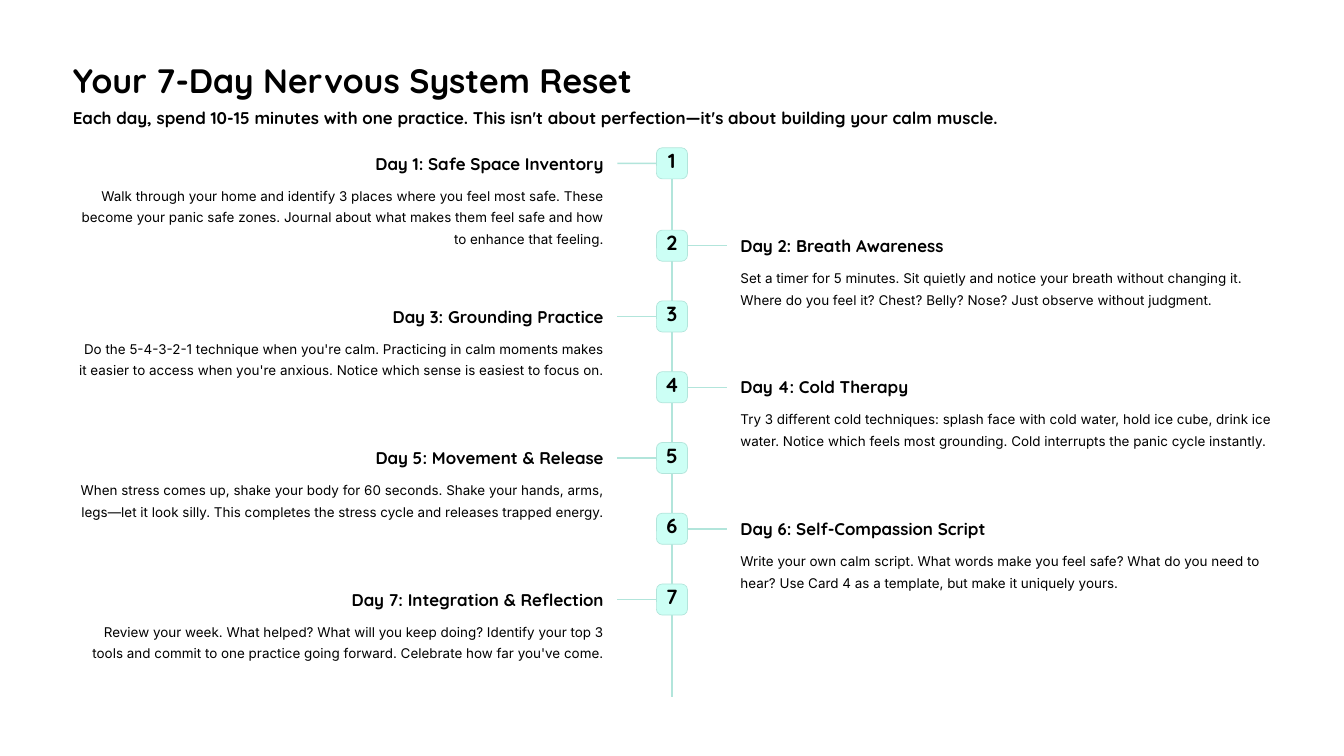
from lxml.etree import SubElement
from pptx import Presentation
from pptx.dml.color import RGBColor
from pptx.enum.shapes import MSO_CONNECTOR as Connector, MSO_SHAPE as Shape
from pptx.enum.text import MSO_ANCHOR as Anchor, MSO_AUTO_SIZE as AutoSize, PP_ALIGN as Align
from pptx.oxml.ns import qn
from pptx.util import Cm, Pt

SLIDE_WIDTH, SLIDE_HEIGHT = 40.64, 22.86
CENTRE = SLIDE_WIDTH / 2
MARGIN = 2.2
COLUMN_WIDTH = 16.05
BADGE = 0.94
BRANCH_REACH = 1.65
FIRST_DAY_TOP, SECOND_DAY_TOP, DAY_STEP = 4.47, 6.96, 2.14
SPINE_BOTTOM = 21.08

INK, MINT, MINT_EDGE = "000000", "CCFFF5", "B2E5DB"
HEADING_FONT, BODY_FONT = "Quicksand", "Inter"

DAYS = [
    ("Day 1: Safe Space Inventory",
     "Walk through your home and identify 3 places where you feel most safe. These become your "
     "panic safe zones. Journal about what makes them feel safe and how to enhance that feeling."),
    ("Day 2: Breath Awareness",
     "Set a timer for 5 minutes. Sit quietly and notice your breath without changing it. "
     "Where do you feel it? Chest? Belly? Nose? Just observe without judgment."),
    ("Day 3: Grounding Practice",
     "Do the 5-4-3-2-1 technique when you're calm. Practicing in calm moments makes it easier "
     "to access when you're anxious. Notice which sense is easiest to focus on."),
    ("Day 4: Cold Therapy",
     "Try 3 different cold techniques: splash face with cold water, hold ice cube, drink ice "
     "water. Notice which feels most grounding. Cold interrupts the panic cycle instantly."),
    ("Day 5: Movement & Release",
     "When stress comes up, shake your body for 60 seconds. Shake your hands, arms, legs—let it "
     "look silly. This completes the stress cycle and releases trapped energy."),
    ("Day 6: Self-Compassion Script",
     "Write your own calm script. What words make you feel safe? What do you need to hear? "
     "Use Card 4 as a template, but make it uniquely yours."),
    ("Day 7: Integration & Reflection",
     "Review your week. What helped? What will you keep doing? Identify your top 3 tools and "
     "commit to one practice going forward. Celebrate how far you've come."),
]


def colour(value):
    """Turn a hex string into a colour."""
    return RGBColor.from_string(value)


def write(holder, words, size, leading, font=HEADING_FONT, align=Align.LEFT, top_inset=0):
    """Fill a shape with one formatted paragraph; headings are bold."""
    frame = holder.text_frame
    frame.text = words
    frame.word_wrap = True
    frame.auto_size = AutoSize.NONE
    frame.vertical_anchor = Anchor.TOP
    frame.margin_left = frame.margin_right = frame.margin_bottom = 0
    frame.margin_top = Cm(top_inset)
    paragraph = frame.paragraphs[0]
    paragraph.alignment = align
    paragraph.line_spacing = Pt(leading)
    paragraph.space_before = Pt(0)
    for run in paragraph.runs:
        run.font.name = font
        run.font.size = Pt(size)
        run.font.bold = font == HEADING_FONT
        run.font.color.rgb = colour(INK)


def place(holder, left, top, width, height):
    """Move and size a placeholder."""
    holder.left, holder.top = Cm(left), Cm(top)
    holder.width, holder.height = Cm(width), Cm(height)


def add_line(slide, x1, y1, x2, y2):
    """Draw a thin mint line without shadow."""
    line = slide.shapes.add_connector(Connector.STRAIGHT, Cm(x1), Cm(y1), Cm(x2), Cm(y2))
    line.line.color.rgb = colour(MINT_EDGE)
    line.line.width = Pt(1.25)
    SubElement(line._element.spPr, qn("a:effectLst"))
    return line


def add_badge(slide, number, top):
    """Draw the rounded number badge centred on the spine."""
    badge = slide.shapes.add_shape(
        Shape.ROUNDED_RECTANGLE, Cm(CENTRE - BADGE / 2), Cm(top), Cm(BADGE), Cm(BADGE))
    badge.adjustments[0] = 0.19
    badge.shadow.inherit = False
    badge.fill.solid()
    badge.fill.fore_color.rgb = colour(MINT)
    badge.line.color.rgb = colour(MINT_EDGE)
    badge.line.width = Pt(0.6)
    write(badge, str(number), 17.5, 17.5, align=Align.CENTER, top_inset=0.08)
    return badge


def add_day(slide, number, heading, practice):
    """Add one day, on the left if odd and on the right if even."""
    on_left = number % 2 == 1
    top = FIRST_DAY_TOP if number == 1 else SECOND_DAY_TOP + (number - 2) * DAY_STEP
    left = MARGIN if on_left else SLIDE_WIDTH - MARGIN - COLUMN_WIDTH
    align = Align.RIGHT if on_left else Align.LEFT
    side = -1 if on_left else 1
    middle = top + BADGE / 2

    badge = add_badge(slide, number, top)
    branch = add_line(slide, CENTRE + side * BRANCH_REACH, middle,
                      CENTRE + side * BADGE / 2, middle)
    branch.end_connect(badge, 1 if on_left else 3)

    title = slide.shapes.add_textbox(Cm(left), Cm(top + 0.14), Cm(COLUMN_WIDTH), Cm(0.64))
    write(title, heading, 14.5, 18, align=align)
    details = slide.shapes.add_textbox(Cm(left), Cm(top + 1.04), Cm(COLUMN_WIDTH), Cm(1.98))
    write(details, practice, 11.5, 18.5, BODY_FONT, align)
    return badge


def main():
    """Build the seven-day timeline slide."""
    deck = Presentation()
    deck.slide_width, deck.slide_height = Cm(SLIDE_WIDTH), Cm(SLIDE_HEIGHT)
    slide = deck.slides.add_slide(deck.slide_layouts[0])

    title, subtitle = slide.placeholders
    place(title, MARGIN, 1.75, 30, 1.3)
    write(title, "Your 7-Day Nervous System Reset", 29, 36.5)
    place(subtitle, MARGIN, 3.23, 36, 0.64)
    write(subtitle, "Each day, spend 10-15 minutes with one practice. This isn't about "
          "perfection—it's about building your calm muscle.", 14.5, 18)

    spine = add_line(slide, CENTRE, FIRST_DAY_TOP, CENTRE, SPINE_BOTTOM)
    badges = [add_day(slide, number, *day) for number, day in enumerate(DAYS, 1)]
    spine.begin_connect(badges[0], 0)

    deck.save("out.pptx")


if __name__ == "__main__":
    main()
